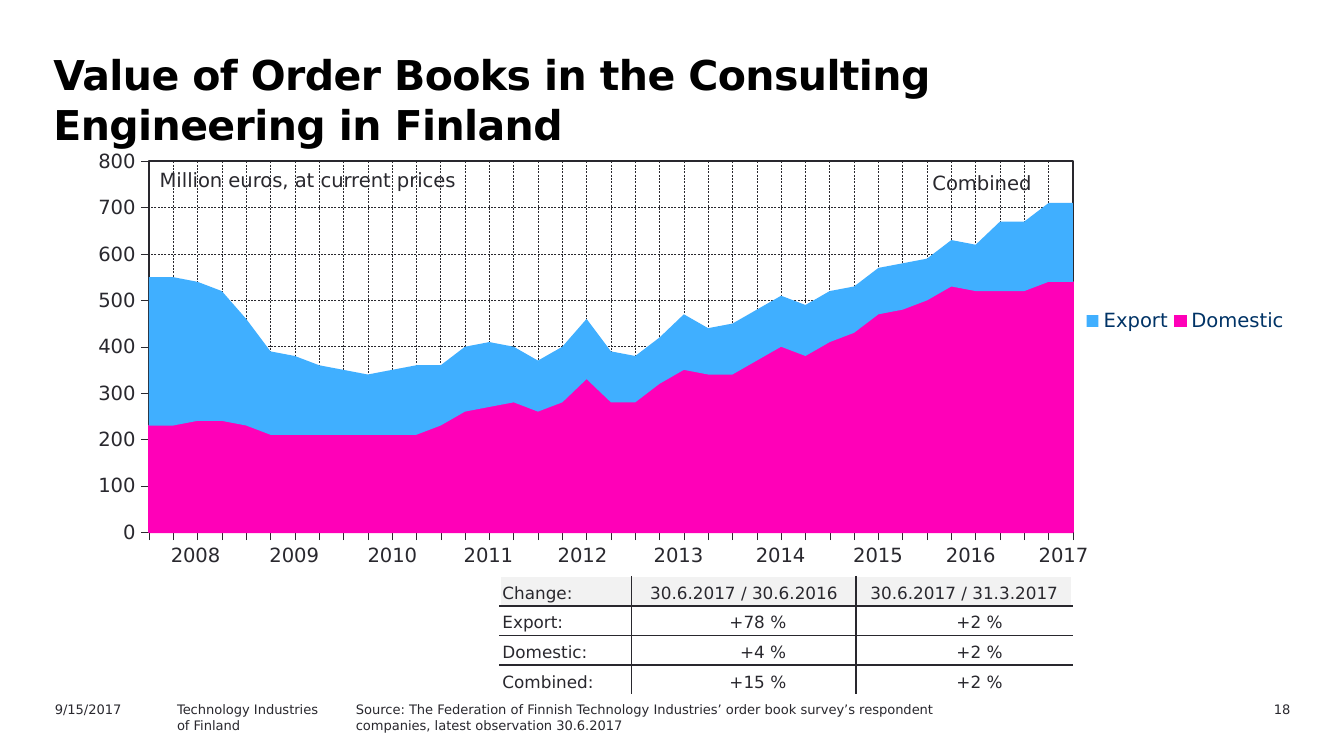
"""Build a slide with a stacked area chart of order books and a table of changes."""
import pptx
import pptx.chart.data
import pptx.dml.color
import pptx.enum.chart
import pptx.enum.dml
import pptx.enum.text
import pptx.oxml
import pptx.oxml.ns
import pptx.util

Pt = pptx.util.Pt
ALIGN = pptx.enum.text.PP_ALIGN
FONT, DARK, WHITE, HEADER = "DejaVu Sans", "29282E", "FFFFFF", "F2F2F2"

TITLE = "Value of Order Books in the Consulting Engineering in Finland"
LABELS = [
    ("18", (630.7, 372.2, 67.7, 13), 7, ALIGN.RIGHT, True),
    ("Source: The Federation of Finnish Technology Industries’ order book survey’s "
     "respondent companies, latest observation 30.6.2017",
     (183.6, 372.2, 360, 18.7), 7, ALIGN.LEFT, True),
    ("Technology Industries\nof Finland", (87.8, 372.2, 129.6, 13), 7, ALIGN.LEFT, True),
    ("9/15/2017", (22.3, 372.2, 72, 13), 7, ALIGN.LEFT, True),
    ("Million euros, at current prices", (78.5, 86.4, 175.7, 19.4), 10.5, ALIGN.LEFT, False),
    ("Combined", (492.5, 87.8, 76.3, 19.4), 10.5, ALIGN.LEFT, True),
]
SERIES = [
    ("Domestic", "FF00B8",
     [230, 230, 240, 240, 230, 210, 210, 210, 210, 210, 210, 210, 230, 260, 270, 280, 260, 280, 330,
      280, 280, 320, 350, 340, 340, 370, 400, 380, 410, 430, 470, 480, 500, 530, 520, 520, 520, 540, 540]),
    ("Export", "40AFFF",
     [320, 320, 300, 280, 230, 180, 170, 150, 140, 130, 140, 150, 130, 140, 140, 120, 110, 120, 130,
      110, 100, 100, 120, 100, 110, 110, 110, 110, 110, 100, 100, 100, 90, 100, 100, 150, 150, 170, 170],),
]
YEARS = [[str(year) for year in range(2008, 2018)]]
YEAR_WIDTHS = [51.1, 54.7, 50.4, 52.6, 48.2, 54.7, 54.7, 49.7, 49.7, 49.7]
CHANGES = [
    ["Change:", "30.6.2017 / 30.6.2016", "30.6.2017 / 31.3.2017"],
    ["Export:", "+78 %", "+2 %"],
    ["Domestic:", "+4 %", "+2 %"],
    ["Combined:", "+15 %", "+2 %"],
]
CHANGE_WIDTHS = [70.6, 120.2, 115.9]


def color(value):
    return pptx.dml.color.RGBColor.from_string(value)


def style_font(font, size, value=DARK, bold=False):
    font.size, font.name, font.bold = Pt(size), FONT, bold
    font.color.rgb = color(value)


def style_line(line, width, value=DARK):
    line.width = Pt(width)
    line.color.rgb = color(value)


def add_label(slide, text, box, size, align, wrap, value=DARK, bold=False):
    shape = slide.shapes.add_textbox(*map(Pt, box))
    shape.text_frame.word_wrap = wrap
    shape.text_frame.text = text
    for paragraph in shape.text_frame.paragraphs:
        paragraph.alignment = align
        for run in paragraph.runs:
            style_font(run.font, size, value, bold)
    return shape


def set_layout(parent, index, left, top, width, height, inner=False):
    for old in parent.findall(pptx.oxml.ns.qn("c:layout")):
        parent.remove(old)
    target = '<c:layoutTarget val="inner"/>' if inner else ""
    parent.insert(index, pptx.oxml.parse_xml(
        f'<c:layout {pptx.oxml.ns.nsdecls("c")}><c:manualLayout>{target}'
        f'<c:xMode val="edge"/><c:yMode val="edge"/><c:x val="{left}"/><c:y val="{top}"/>'
        f'<c:w val="{width}"/><c:h val="{height}"/></c:manualLayout></c:layout>'))


def add_order_chart(slide):
    data = pptx.chart.data.CategoryChartData(number_format="#,##0")
    data.categories = [str(number + 1) for number in range(len(SERIES[0][2]))]
    for name, _, values in SERIES:
        data.add_series(name, values)
    chart = slide.shapes.add_chart(pptx.enum.chart.XL_CHART_TYPE.AREA_STACKED,
                                   Pt(30.2), Pt(79.9), Pt(661), Pt(224.6), data).chart
    chart.has_title = False
    style_font(chart.font, 10.5)
    for series, (_, value, _) in zip(chart.plots[0].series, SERIES):
        series.format.fill.solid()
        series.format.fill.fore_color.rgb = color(value)
    style_line(chart.plots[0].series[0].format.line, 0.88, SERIES[0][1])
    for axis in (chart.category_axis, chart.value_axis):
        axis.major_tick_mark = pptx.enum.chart.XL_TICK_MARK.OUTSIDE
        axis.has_major_gridlines = True
        style_line(axis.format.line, 0.22)
        grid = axis.major_gridlines.format.line
        style_line(grid, 0.25)
        grid.dash_style = pptx.enum.dml.MSO_LINE.DASH
    chart.category_axis.tick_label_position = pptx.enum.chart.XL_TICK_LABEL_POSITION.NONE
    axis = chart.value_axis
    axis.minimum_scale, axis.maximum_scale, axis.major_unit = 0, 800, 100
    axis.tick_labels.number_format = "#,##0"
    axis.tick_labels.number_format_is_linked = False
    style_font(axis.tick_labels.font, 10.5)
    chart.has_legend = True
    chart.legend.position = pptx.enum.chart.XL_LEGEND_POSITION.RIGHT
    chart.legend.include_in_layout = False
    style_font(chart.legend.font, 10.5, "003366")
    set_layout(chart.legend._element, 1, 0.83, 0.37, 0.17, 0.08)
    area = chart._chartSpace.chart.plotArea
    set_layout(area, 0, 0.075, 0.029, 0.749, 0.885, inner=True)
    for crossing in area.iter(pptx.oxml.ns.qn("c:crossBetween")):
        crossing.set("val", "midCat")
    area.append(pptx.oxml.parse_xml(
        f'<c:spPr {pptx.oxml.ns.nsdecls("c", "a")}><a:noFill/><a:ln w="12700"><a:solidFill>'
        f'<a:srgbClr val="{DARK}"/></a:solidFill></a:ln></c:spPr>'))


def set_borders(cell, borders):
    for side, value in zip("LRTB", borders):
        paint = f'<a:solidFill><a:srgbClr val="{value}"/></a:solidFill>' if value else "<a:noFill/>"
        cell._tc.get_or_add_tcPr().append(pptx.oxml.parse_xml(
            f'<a:ln{side} {pptx.oxml.ns.nsdecls("a")} w="12700">{paint}</a:ln{side}>'))


def add_grid(slide, rows, widths, left, top, row_height, size, style_cell):
    table = slide.shapes.add_table(len(rows), len(widths), Pt(left), Pt(top),
                                   Pt(sum(widths)), Pt(row_height * len(rows))).table
    table.first_row = table.horz_banding = False
    for column, width in zip(table.columns, widths):
        column.width = Pt(width)
    for row_index, row in enumerate(rows):
        table.rows[row_index].height = Pt(row_height)
        for column_index, text in enumerate(row):
            cell = table.cell(row_index, column_index)
            cell.text_frame.text = text
            paragraph = cell.text_frame.paragraphs[0]
            style_font(paragraph.runs[0].font, size)
            style_cell(cell, paragraph, row_index, column_index)


def style_year(cell, paragraph, row, column):
    paragraph.alignment = ALIGN.CENTER
    set_borders(cell, [None] * 4)
    cell.fill.background()


def style_change(cell, paragraph, row, column):
    last_row, last_column = len(CHANGES) - 1, len(CHANGE_WIDTHS) - 1
    outer = (column == 0, column == last_column, row == 0, row == last_row)
    set_borders(cell, [WHITE if edge else DARK for edge in outer])
    cell.fill.solid()
    cell.fill.fore_color.rgb = color(HEADER if row == 0 else WHITE)
    cell.vertical_anchor = pptx.enum.text.MSO_ANCHOR.BOTTOM
    cell.margin_left = cell.margin_right = cell.margin_top = cell.margin_bottom = Pt(1.4)
    if column == 0:
        paragraph.alignment = ALIGN.LEFT
    elif row == 0:
        paragraph.alignment = ALIGN.CENTER
    else:
        paragraph.alignment = ALIGN.RIGHT
        cell.margin_right = Pt(37.4)


def main():
    presentation = pptx.Presentation()
    presentation.slide_width, presentation.slide_height = Pt(720), Pt(405)
    slide = presentation.slides.add_slide(presentation.slide_layouts[6])
    title = add_label(slide, TITLE, (21.6, 22.3, 629.3, 51.1), 22, ALIGN.LEFT, True, "000000", True)
    paragraph = title.text_frame.paragraphs[0]
    paragraph.line_spacing = Pt(27)
    paragraph.runs[0]._r.get_or_add_rPr().set("spc", "-30")
    add_order_chart(slide)
    add_grid(slide, YEARS, YEAR_WIDTHS, 79.2, 288, 18, 10.5, style_year)
    add_grid(slide, CHANGES, CHANGE_WIDTHS, 267.8, 308.9, 15.84, 9, style_change)
    for label in LABELS:
        add_label(slide, *label)
    presentation.save("out.pptx")


if __name__ == "__main__":
    main()
